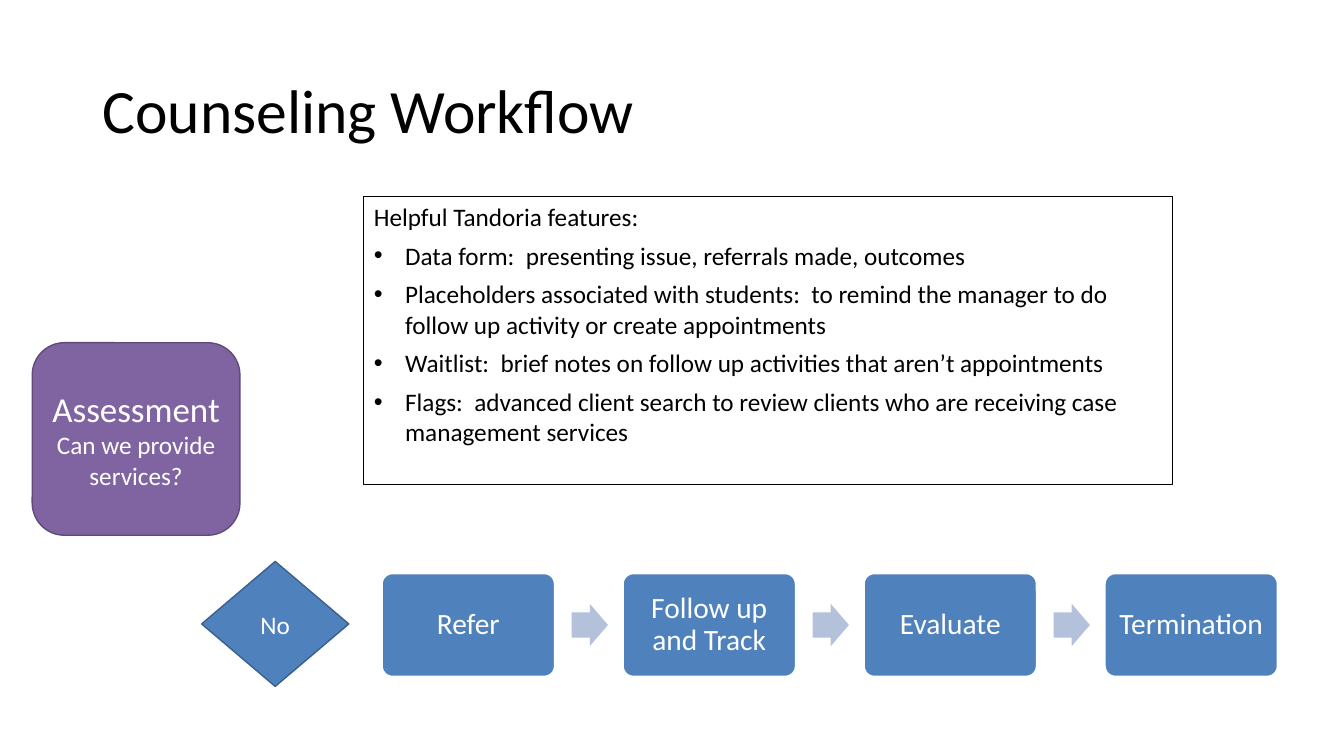
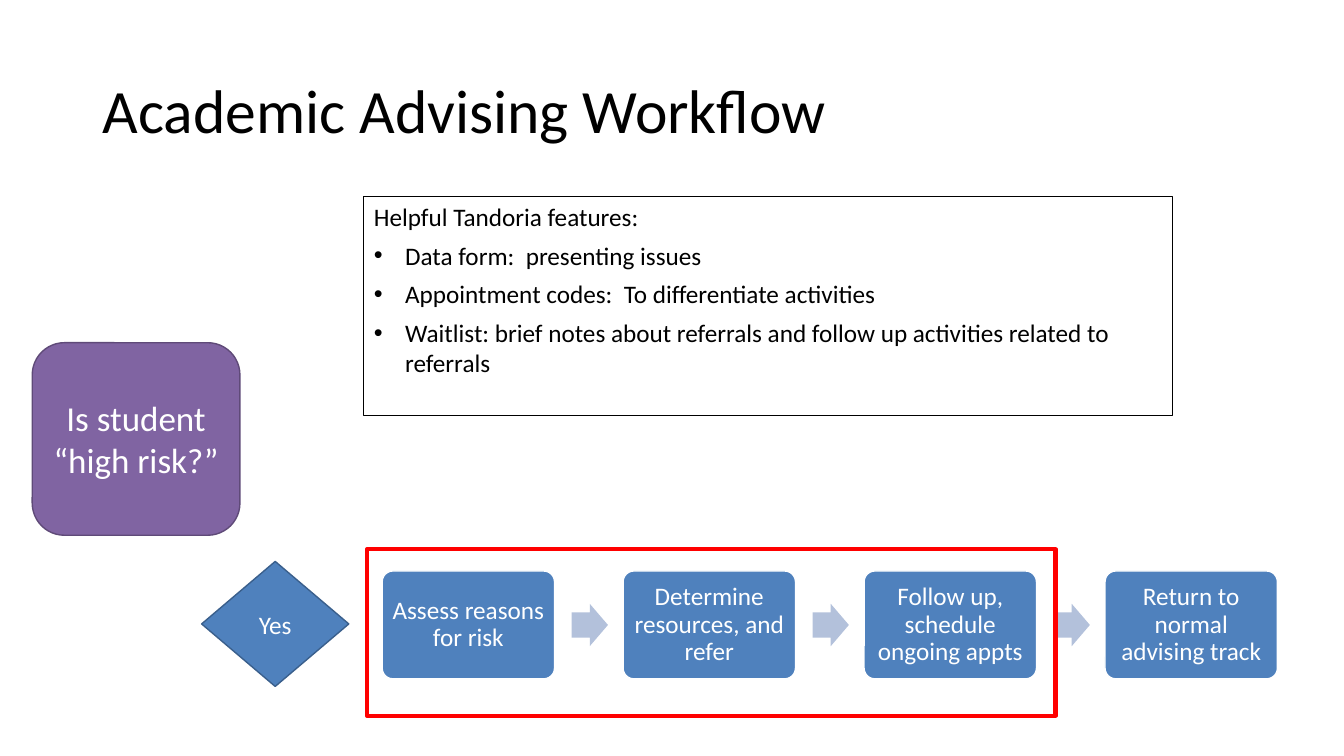
"""Build two workflow slides: counseling and academic advising."""
from dataclasses import dataclass

from lxml.etree import SubElement
from pptx import Presentation
from pptx.dml.color import RGBColor
from pptx.enum.shapes import MSO_SHAPE
from pptx.enum.text import MSO_ANCHOR, PP_ALIGN
from pptx.oxml.ns import qn
from pptx.shapes.autoshape import Shape
from pptx.slide import Slide
from pptx.text.text import _Paragraph
from pptx.util import Inches, Pt

FONT = "Calibri"
BLACK = RGBColor(0x00, 0x00, 0x00)
WHITE = RGBColor(0xFF, 0xFF, 0xFF)
PURPLE = RGBColor(0x80, 0x64, 0xA2)
DARK_PURPLE = RGBColor(0x5F, 0x4A, 0x78)
BLUE = RGBColor(0x4F, 0x81, 0xBD)
DARK_BLUE = RGBColor(0x3A, 0x5F, 0x8C)
PALE_BLUE = RGBColor(0xB3, 0xC1, 0xDB)
RED = RGBColor(0xFF, 0x00, 0x00)

STEP_LEFT, STEP_MIDDLE, STEP_WIDTH, STEP_PITCH = 3.79, 6.2, 1.71, 2.39
ARROW_OFFSET, ARROW_WIDTH, ARROW_HEIGHT = 1.88, 0.36, 0.42
FEATURES_HEADING = "Helpful Tandoria features:"


@dataclass(frozen=True)
class Box:
    """Position and size in inches."""
    left: float
    top: float
    width: float
    height: float


@dataclass(frozen=True)
class Line:
    """A line of text and its size in points."""
    text: str
    size: float


@dataclass(frozen=True)
class Workflow:
    """The content of one workflow slide."""
    title: str
    question: list[Line]
    answer: str
    steps: list[str]
    step_size: float
    step_height: float
    step_inset: float
    features: list[str]
    features_height: float
    highlight: Box | None = None


TITLE_BOX = Box(0.92, 0.4, 11.5, 1.45)
QUESTION_BOX = Box(0.32, 3.4, 2.06, 1.91)
ANSWER_BOX = Box(2, 5.57, 1.46, 1.24)

WORKFLOWS = [
    Workflow(
        title="Counseling Workflow",
        question=[Line("Assessment", 25), Line("Can we provide services?", 18)],
        answer="No",
        steps=["Refer", "Follow up and Track", "Evaluate", "Termination"],
        step_size=21,
        step_height=1.02,
        step_inset=0.09,
        features=[
            "Data form:  presenting issue, referrals made, outcomes",
            "Placeholders associated with students:  to remind the manager "
            "to do follow up activity or create appointments",
            "Waitlist:  brief notes on follow up activities that aren’t appointments",
            "Flags:  advanced client search to review clients who are "
            "receiving case management services",
        ],
        features_height=2.86,
    ),
    Workflow(
        title="Academic Advising Workflow",
        question=[Line("Is student “high risk?”", 25)],
        answer="Yes",
        steps=[
            "Assess reasons for risk",
            "Determine resources, and refer",
            "Follow up, schedule ongoing appts",
            "Return to normal advising track",
        ],
        step_size=18,
        step_height=1.07,
        step_inset=0.07,
        features=[
            "Data form:  presenting issues",
            "Appointment codes:  To differentiate activities",
            "Waitlist: brief notes about referrals and follow up activities "
            "related to referrals",
        ],
        features_height=2.17,
        highlight=Box(3.64, 5.45, 6.83, 1.65),
    ),
]


def lengths(box: Box) -> tuple[Inches, Inches, Inches, Inches]:
    """Return the box as slide lengths."""
    return Inches(box.left), Inches(box.top), Inches(box.width), Inches(box.height)


def add_block(slide: Slide, preset: MSO_SHAPE, box: Box, fill: RGBColor | None = None,
              outline: RGBColor | None = None, weight: float = 1) -> Shape:
    """Add a shadowless preset shape with an optional fill and outline."""
    block = slide.shapes.add_shape(preset, *lengths(box))
    block.shadow.inherit = False
    if fill is None:
        block.fill.background()
    else:
        block.fill.solid()
        block.fill.fore_color.rgb = fill
    if outline is None:
        block.line.fill.background()
    else:
        block.line.color.rgb = outline
        block.line.width = Pt(weight)
    return block


def write(shape: Shape, lines: list[Line], color: RGBColor = WHITE,
          align: PP_ALIGN = PP_ALIGN.CENTER, anchor: MSO_ANCHOR = MSO_ANCHOR.MIDDLE,
          spacing: float = 1.0) -> None:
    """Write one paragraph per line into the shape."""
    frame = shape.text_frame
    frame.word_wrap = True
    frame.vertical_anchor = anchor
    frame.text = "\n".join(line.text for line in lines)
    for paragraph, line in zip(frame.paragraphs, lines):
        paragraph.alignment = align
        paragraph.line_spacing = spacing
        paragraph.font.name = FONT
        paragraph.font.size = Pt(line.size)
        paragraph.font.color.rgb = color


def add_bullet(paragraph: _Paragraph) -> None:
    """Give the paragraph a hanging bullet and space before it."""
    paragraph.space_before = Pt(6)
    properties = paragraph._p.get_or_add_pPr()
    properties.set("marL", str(Inches(0.31)))
    properties.set("indent", str(Inches(-0.31)))
    SubElement(properties, qn("a:buFont"), typeface="Arial")
    SubElement(properties, qn("a:buChar"), char="•")


def add_title(slide: Slide, title: str) -> None:
    """Add the slide title."""
    heading = slide.shapes.add_textbox(*lengths(TITLE_BOX))
    write(heading, [Line(title, 44)], BLACK, PP_ALIGN.LEFT, spacing=0.9)


def add_steps(slide: Slide, workflow: Workflow) -> None:
    """Add the row of steps with an arrow between neighbours."""
    for index, label in enumerate(workflow.steps):
        left = STEP_LEFT + index * STEP_PITCH
        step_box = Box(left, STEP_MIDDLE - workflow.step_height / 2,
                       STEP_WIDTH, workflow.step_height)
        step = add_block(slide, MSO_SHAPE.ROUNDED_RECTANGLE, step_box, BLUE, WHITE)
        step.adjustments[0] = 0.1
        frame = step.text_frame
        frame.margin_left = frame.margin_right = Inches(workflow.step_inset)
        frame.margin_top = frame.margin_bottom = Inches(workflow.step_inset)
        write(step, [Line(label, workflow.step_size)], spacing=0.9)
        if index < len(workflow.steps) - 1:
            arrow_box = Box(left + ARROW_OFFSET, STEP_MIDDLE - ARROW_HEIGHT / 2,
                            ARROW_WIDTH, ARROW_HEIGHT)
            arrow = add_block(slide, MSO_SHAPE.RIGHT_ARROW, arrow_box, PALE_BLUE)
            arrow.adjustments[0] = 0.6


def add_features(slide: Slide, workflow: Workflow) -> None:
    """Add the outlined list of helpful features."""
    features_box = Box(3.61, 1.95, 8.02, workflow.features_height)
    panel = add_block(slide, MSO_SHAPE.RECTANGLE, features_box, outline=BLACK, weight=0.75)
    lines = [Line(text, 18) for text in [FEATURES_HEADING, *workflow.features]]
    write(panel, lines, BLACK, PP_ALIGN.LEFT, MSO_ANCHOR.TOP)
    for paragraph in panel.text_frame.paragraphs[1:]:
        add_bullet(paragraph)


def add_workflow(slide: Slide, workflow: Workflow) -> None:
    """Draw one workflow on the slide."""
    add_title(slide, workflow.title)
    question = add_block(slide, MSO_SHAPE.ROUNDED_RECTANGLE, QUESTION_BOX, PURPLE, DARK_PURPLE)
    write(question, workflow.question)
    add_steps(slide, workflow)
    answer = add_block(slide, MSO_SHAPE.FLOWCHART_DECISION, ANSWER_BOX, BLUE, DARK_BLUE)
    write(answer, [Line(workflow.answer, 18)])
    add_features(slide, workflow)
    if workflow.highlight:
        add_block(slide, MSO_SHAPE.RECTANGLE, workflow.highlight, outline=RED, weight=3)


def main() -> None:
    """Build and save the presentation."""
    presentation = Presentation()
    presentation.slide_width = Inches(13.33)
    presentation.slide_height = Inches(7.5)
    blank = presentation.slide_layouts[6]
    for workflow in WORKFLOWS:
        add_workflow(presentation.slides.add_slide(blank), workflow)
    presentation.save("out.pptx")


if __name__ == "__main__":
    main()
